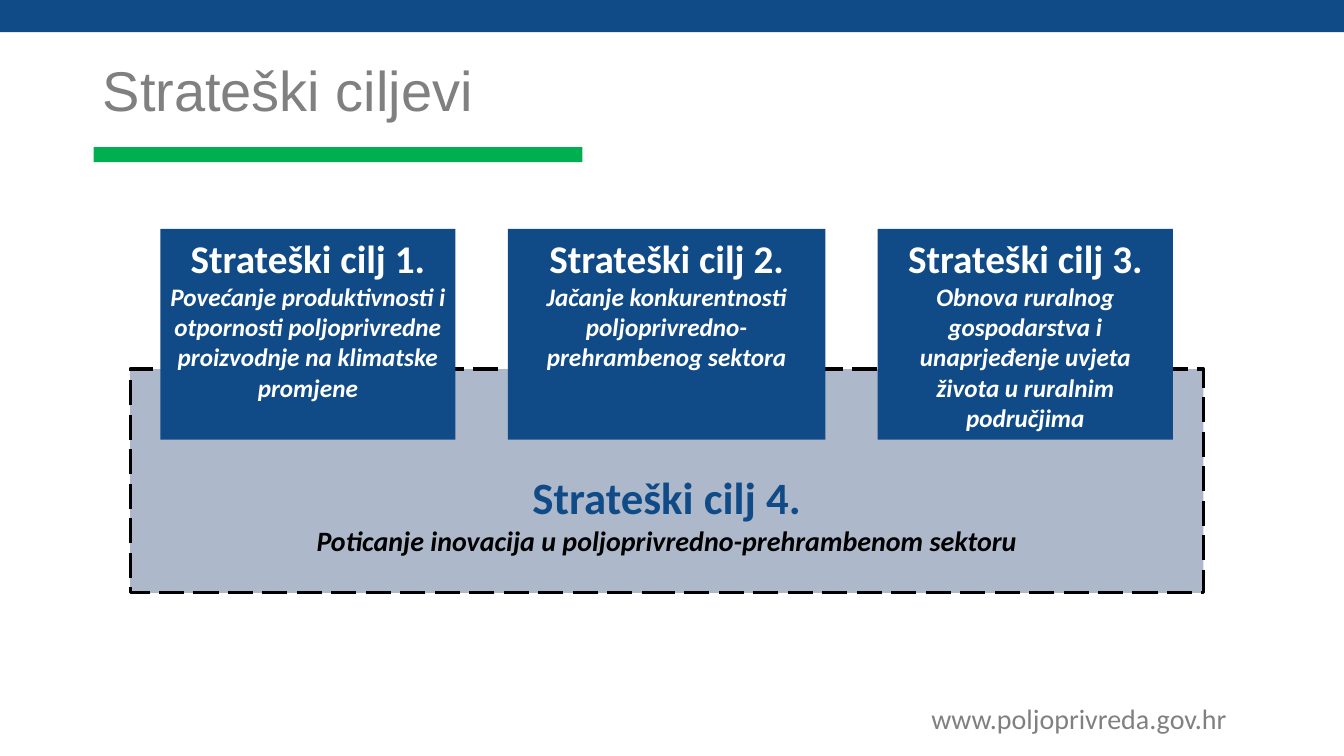
from dataclasses import dataclass
from typing import Optional

from pptx import Presentation
from pptx import util as u
from pptx.dml.color import RGBColor
from pptx.enum import dml, shapes, text


@dataclass(frozen=True)
class Theme:
    blue: str = "114B87"
    green: str = "00B050"
    panel: str = "ADB9CA"
    grey: str = "808080"
    white: str = "FFFFFF"
    black: str = "000000"
    title_font: str = "Arial"
    body_font: str = "Calibri"
    title_size: int = 40
    panel_heading_size: int = 32
    card_heading_size: int = 28
    panel_size: int = 20
    web_size: int = 20
    card_size: int = 18


@dataclass(frozen=True)
class Box:
    left: float
    top: float
    width: float
    height: float


@dataclass(frozen=True)
class Style:
    size: int
    color: str
    font: str = "Calibri"
    bold: bool = False
    italic: bool = False


@dataclass(frozen=True)
class Goal:
    heading: str
    aim: str
    width: float


THEME = Theme()
SLIDE_WIDTH, SLIDE_HEIGHT = 33.87, 19.05
CARD_LEFT, CARD_TOP, CARD_HEIGHT, CARD_GAP = 4.04, 5.77, 5.31, 1.32

GOALS = [
    Goal("Strateški cilj 1.",
         "Povećanje produktivnosti i otpornosti poljoprivredne proizvodnje na klimatske promjene",
         7.44),
    Goal("Strateški cilj 2.",
         "Jačanje konkurentnosti poljoprivredno-prehrambenog sektora",
         8.0),
    Goal("Strateški cilj 3.",
         "Obnova ruralnog gospodarstva i unaprjeđenje uvjeta života u ruralnim područjima",
         7.44),
]
INNOVATION = Goal("Strateški cilj 4.",
                  "Poticanje inovacija u poljoprivredno-prehrambenom sektoru",
                  27.05)


def place(box: Box) -> list[int]:
    return [u.Cm(side) for side in (box.left, box.top, box.width, box.height)]


def style_paragraph(paragraph, style: Style) -> None:
    for run in paragraph.runs:
        run.font.name = style.font
        run.font.size = u.Pt(style.size)
        run.font.bold = style.bold
        run.font.italic = style.italic
        run.font.color.rgb = RGBColor.from_string(style.color)


def draw_rectangle(slide, box: Box, fill: str, outline: Optional[str] = None):
    rectangle = slide.shapes.add_shape(shapes.MSO_SHAPE.RECTANGLE, *place(box))
    rectangle.shadow.inherit = False
    rectangle.fill.solid()
    rectangle.fill.fore_color.rgb = RGBColor.from_string(fill)
    if outline:
        rectangle.line.color.rgb = RGBColor.from_string(outline)
        rectangle.line.width = u.Pt(2.25)
        rectangle.line.dash_style = dml.MSO_LINE.LONG_DASH
    else:
        rectangle.line.fill.background()
    return rectangle


def write_goal(rectangle, goal: Goal, heading: Style, aim: Style, inset: float) -> None:
    frame = rectangle.text_frame
    frame.word_wrap = True
    frame.vertical_anchor = text.MSO_ANCHOR.TOP
    frame.margin_top = u.Cm(inset)
    frame.text = f"{goal.heading}\n{goal.aim}"
    for paragraph, style in zip(frame.paragraphs, (heading, aim)):
        paragraph.alignment = text.PP_ALIGN.CENTER
        style_paragraph(paragraph, style)


def write_label(slide, box: Box, words: str, style: Style,
                anchor: text.MSO_ANCHOR, spacing: float = 1.0) -> None:
    frame = slide.shapes.add_textbox(*place(box)).text_frame
    frame.word_wrap = True
    frame.vertical_anchor = anchor
    frame.text = words
    frame.paragraphs[0].line_spacing = spacing
    style_paragraph(frame.paragraphs[0], style)


def draw_goals(slide) -> None:
    foundation = draw_rectangle(slide, Box(3.28, 9.3, INNOVATION.width, 5.64),
                                THEME.panel, THEME.black)
    write_goal(foundation, INNOVATION,
               Style(THEME.panel_heading_size, THEME.blue, THEME.body_font, bold=True),
               Style(THEME.panel_size, THEME.black, THEME.body_font, bold=True, italic=True),
               inset=2.54)

    left = CARD_LEFT
    for goal in GOALS:
        card = draw_rectangle(slide, Box(left, CARD_TOP, goal.width, CARD_HEIGHT), THEME.blue)
        write_goal(card, goal,
                   Style(THEME.card_heading_size, THEME.white, THEME.body_font, bold=True),
                   Style(THEME.card_size, THEME.white, THEME.body_font, bold=True, italic=True),
                   inset=0.13)
        left += goal.width + CARD_GAP


def main() -> None:
    presentation = Presentation()
    presentation.slide_width = u.Cm(SLIDE_WIDTH)
    presentation.slide_height = u.Cm(SLIDE_HEIGHT)
    slide = presentation.slides.add_slide(presentation.slide_layouts[6])

    draw_rectangle(slide, Box(2.36, 3.71, 12.32, 0.38), THEME.green)
    draw_rectangle(slide, Box(0, 0, SLIDE_WIDTH, 0.81), THEME.blue)
    write_label(slide, Box(23.22, 17.55, 8.33, 1.12), "www.poljoprivreda.gov.hr",
                Style(THEME.web_size, THEME.grey, THEME.body_font), text.MSO_ANCHOR.TOP)
    write_label(slide, Box(2.34, 1.02, 29.21, 2.69), "Strateški ciljevi",
                Style(THEME.title_size, THEME.grey, THEME.title_font),
                text.MSO_ANCHOR.MIDDLE, spacing=0.9)
    draw_goals(slide)
    presentation.save("out.pptx")


if __name__ == "__main__":
    main()
